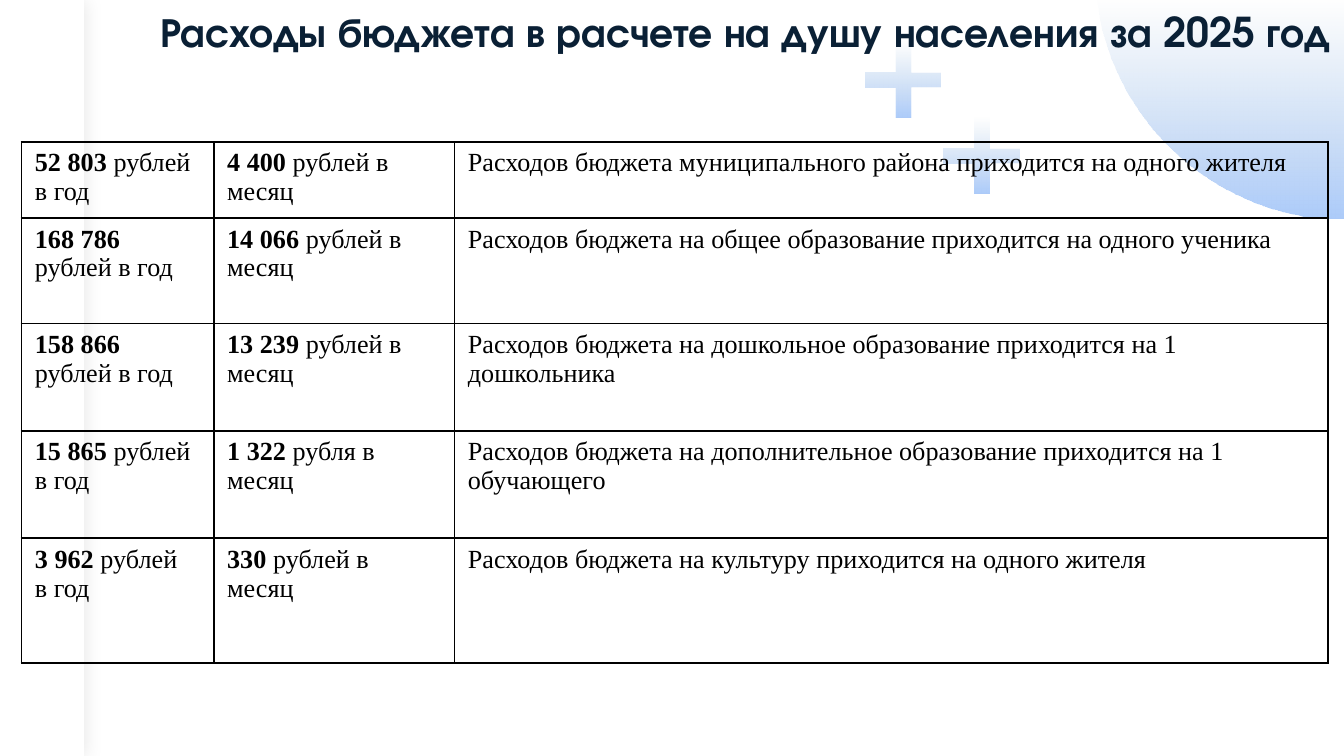
from dataclasses import dataclass

from lxml import etree
from pptx import Presentation
from pptx import util as u
from pptx.dml.color import RGBColor
from pptx.enum import shapes, text
from pptx.oxml import parse_xml
from pptx.oxml.ns import nsdecls, qn


@dataclass(frozen=True)
class Theme:
    white: str = "FFFFFF"
    black: str = "000000"
    title: str = "0A2035"
    fade_top: str = "B4CCE7"
    fade_bottom: str = "ACCBF9"
    title_font: str = "TeX Gyre Adventor"
    body_font: str = "Times New Roman"
    title_size: float = 22
    body_size: float = 14
    border: float = 1


def bezier(start, control_1, control_2, end, steps=32):
    """Return points along a cubic curve, without its start."""
    points = []
    for step in range(1, steps + 1):
        t = step / steps
        weights = ((1 - t) ** 3, 3 * t * (1 - t) ** 2, 3 * t * t * (1 - t), t ** 3)
        corners = (start, control_1, control_2, end)
        points.append(tuple(sum(w * c[axis] for w, c in zip(weights, corners))
                            for axis in (0, 1)))
    return points


class SlideBuilder:
    def __init__(self, slide, theme):
        self.slide = slide
        self.theme = theme

    def style_font(self, paragraph, name, size, color):
        font = paragraph.font
        font.name, font.size = name, u.Pt(size)
        font.color.rgb = RGBColor.from_string(color)

    def fade(self, shape):
        """Fill a shape from clear at the top to blue at the bottom."""
        shape.shadow.inherit = False
        shape.line.fill.background()
        shape.fill.gradient()
        shape.fill.gradient_angle = 270
        top, bottom = shape.fill.gradient_stops
        for stop, color, position in ((top, self.theme.fade_top, 0),
                                      (bottom, self.theme.fade_bottom, 1)):
            stop.color.rgb = RGBColor.from_string(color)
            stop.position = position
        clear_color = shape.fill._fill._gradFill.find(".//" + qn("a:srgbClr"))
        etree.SubElement(clear_color, qn("a:alpha"), val="0")

    def corner_blob(self, points):
        points = [(u.Pt(x), u.Pt(y)) for x, y in points]
        builder = self.slide.shapes.build_freeform(*points[0])
        builder.add_line_segments(points[1:], close=True)
        self.fade(builder.convert_to_shape())

    def side_strip(self, width, height):
        shape = self.slide.shapes.add_shape(
            shapes.MSO_SHAPE.RECTANGLE, 0, 0, u.Pt(width), u.Pt(height))
        shape.fill.solid()
        shape.fill.fore_color.rgb = RGBColor.from_string(self.theme.white)
        shape.line.fill.background()
        shape._element.spPr.append(parse_xml(
            f'<a:effectLst {nsdecls("a")}><a:outerShdw blurRad="{u.Pt(10)}" dist="0" '
            f'dir="0" algn="ctr" rotWithShape="0"><a:srgbClr val="{self.theme.black}">'
            '<a:alpha val="10000"/></a:srgbClr></a:outerShdw></a:effectLst>'))

    def plus(self, left, top, size):
        shape = self.slide.shapes.add_shape(
            shapes.MSO_SHAPE.CROSS, u.Pt(left), u.Pt(top), u.Pt(size), u.Pt(size))
        shape.adjustments[0] = 0.4
        self.fade(shape)

    def title(self, words, width, height):
        frame = self.slide.shapes.add_textbox(0, 0, u.Pt(width), u.Pt(height)).text_frame
        frame.word_wrap = True
        frame.vertical_anchor = text.MSO_ANCHOR.MIDDLE
        paragraph = frame.paragraphs[0]
        paragraph.text = words
        paragraph.alignment = text.PP_ALIGN.RIGHT
        self.style_font(paragraph, self.theme.title_font, self.theme.title_size,
                        self.theme.title)
        paragraph.font.bold = True

    def border_cell(self, cell):
        properties = cell._tc.get_or_add_tcPr()
        for side in ("lnL", "lnR", "lnT", "lnB"):
            properties.append(parse_xml(
                f'<a:{side} {nsdecls("a")} w="{u.Pt(self.theme.border)}"><a:solidFill>'
                f'<a:srgbClr val="{self.theme.black}"/></a:solidFill></a:{side}>'))
        cell.fill.background()

    def fill_cell(self, cell, amount, words):
        """Write a bold amount and its words; a line break starts a paragraph."""
        self.border_cell(cell)
        frame = cell.text_frame
        for index, line in enumerate(words.split("\n")):
            paragraph = frame.add_paragraph() if index else frame.paragraphs[0]
            if amount and index == 0:
                run = paragraph.add_run()
                run.text = amount + " "
                run.font.bold = True
            paragraph.add_run().text = line
            self.style_font(paragraph, self.theme.body_font, self.theme.body_size,
                            self.theme.black)

    def table(self, left, top, widths, heights, rows):
        table = self.slide.shapes.add_table(
            len(heights), len(widths), u.Pt(left), u.Pt(top),
            u.Pt(sum(widths)), u.Pt(sum(heights))).table
        table.first_row = table.horz_banding = False
        for column, width in zip(table.columns, widths):
            column.width = u.Pt(width)
        for row, height, contents in zip(table.rows, heights, rows):
            row.height = u.Pt(height)
            for cell, (amount, words) in zip(row.cells, contents):
                self.fill_cell(cell, amount, words)


WIDTH, HEIGHT = 720, 405
PER_YEAR, PER_YEAR_SPLIT, PER_MONTH = "рублей в год", "рублей\nв год", "рублей в месяц"
EXPENSES = [
    (("52 803", PER_YEAR), ("4 400", PER_MONTH),
     ("", "Расходов бюджета муниципального района приходится на одного жителя")),
    (("168 786", PER_YEAR), ("14 066", PER_MONTH),
     ("", "Расходов бюджета на общее образование приходится на одного ученика")),
    (("158 866", PER_YEAR), ("13 239", PER_MONTH),
     ("", "Расходов бюджета на дошкольное образование приходится на 1 дошкольника")),
    (("15 865", PER_YEAR_SPLIT), ("1 322", "рубля в месяц"),
     ("", "Расходов бюджета на дополнительное образование приходится на 1 обучающего")),
    (("3 962", PER_YEAR_SPLIT), ("330", PER_MONTH),
     ("", "Расходов бюджета на культуру приходится на одного жителя")),
]


def main():
    presentation = Presentation()
    presentation.slide_width, presentation.slide_height = u.Pt(WIDTH), u.Pt(HEIGHT)
    slide = presentation.slides.add_slide(presentation.slide_layouts[6])
    builder = SlideBuilder(slide, Theme())

    curve = bezier((708, 117), (649.5, 111.5), (601, 67.5), (589.5, 11))
    builder.corner_blob([(588, 0), (WIDTH, 0), (WIDTH, 117), (708, 117), *curve])
    builder.side_strip(45, HEIGHT)
    for left, top in ((463.5, 22.5), (505.5, 63)):
        builder.plus(left, top, 40.5)
    builder.title("Расходы бюджета в расчете на душу населения за 2025 год", WIDTH, 33)
    builder.table(11.5, 76, (103, 129, 468), (40.5, 56.5, 57.5, 57.5, 67), EXPENSES)
    presentation.save("out.pptx")


if __name__ == "__main__":
    main()
